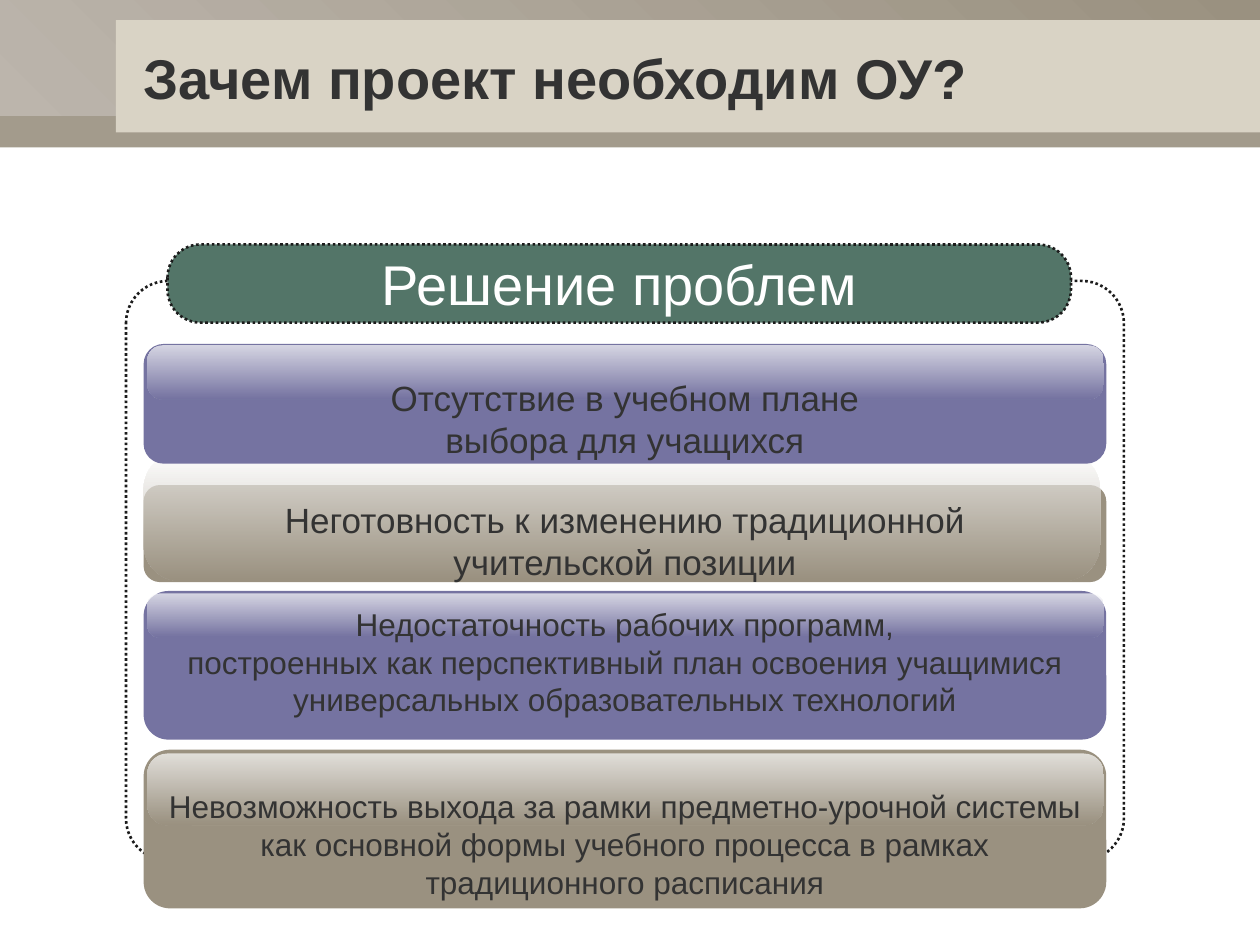
from dataclasses import dataclass

from lxml import etree
from pptx import Presentation
from pptx.dml.color import RGBColor
from pptx.enum.dml import MSO_LINE
from pptx.enum.shapes import MSO_SHAPE
from pptx.enum.text import MSO_ANCHOR, PP_ALIGN
from pptx.oxml.ns import qn
from pptx.util import Inches, Pt

RECT, ROUND = MSO_SHAPE.RECTANGLE, MSO_SHAPE.ROUNDED_RECTANGLE
DOT = MSO_LINE.ROUND_DOT
MIDDLE = MSO_ANCHOR.MIDDLE
LEFT, CENTER = PP_ALIGN.LEFT, PP_ALIGN.CENTER


@dataclass(frozen=True)
class Theme:
    font: str = "Arial"
    ink: str = "333333"
    white: str = "FFFFFF"
    taupe: str = "9A9180"
    mist: str = "BCB5AC"
    sand: str = "D9D3C5"
    violet: str = "7573A1"
    green: str = "537568"
    edge: str = "1C1C1C"
    head: int = 32
    large: int = 20
    body: int = 18


T = Theme()

# From top to bottom; tops and gloss offsets are relative to panel and card.
# top, height, gloss (x, y, height), label (y, height), colour, size, lines
CARDS = [
    (0.5, 0.95, (0.03, 0.01, 0.43), (0.25, 0.68), T.violet, T.large,
     ["Отсутствие в учебном плане", "выбора для учащихся"]),
    (1.62, 0.77, (0, -0.26, 1.02), (0.1, 0.68), T.taupe, T.large,
     ["Неготовность к изменению традиционной", "учительской позиции"]),
    (2.46, 1.18, (0.03, 0.02, 0.35), (0, 1.12), T.violet, T.body,
     ["Недостаточность рабочих программ,",
      "построенных как перспективный план освоения учащимися",
      "универсальных образовательных технологий"]),
    (3.72, 1.26, (0.03, 0.03, 0.57), (0.24, 1.01), T.taupe, T.body,
     ["Невозможность выхода за рамки предметно-урочной системы "
      "как основной формы учебного процесса в рамках "
      "традиционного расписания"]),
]


def rgb(code):
    return RGBColor.from_string(code)


def block(slide, box, kind=RECT, fill=None, fade=None, angle=270,
          alpha=None, round=None, dotted=False):
    """Add a shape; fade is a pair of colours, alpha a percentage."""
    shape = slide.shapes.add_shape(kind, *map(Inches, box))
    shape.shadow.inherit = False
    if round is not None:
        shape.adjustments[0] = round
    if fade:
        shape.fill.gradient()
        shape.fill.gradient_angle = angle
        for stop, code in zip(shape.fill.gradient_stops, fade):
            stop.color.rgb = rgb(code)
    elif fill:
        shape.fill.solid()
        shape.fill.fore_color.rgb = rgb(fill)
    else:
        shape.fill.background()
    if alpha:
        for color in shape._element.spPr.iter(qn("a:srgbClr")):
            etree.SubElement(color, qn("a:alpha")).set("val", str(alpha * 1000))
    if dotted:
        shape.line.color.rgb = rgb(T.edge)
        shape.line.width = Pt(1.5)
        shape.line.dash_style = DOT
    else:
        shape.line.fill.background()
    return shape


def write(shape, lines, size=T.body, color=T.ink, bold=False,
          align=CENTER, wrap=True):
    frame = shape.text_frame
    frame.word_wrap = wrap
    frame.vertical_anchor = MIDDLE
    for i, line in enumerate(lines):
        para = frame.add_paragraph() if i else frame.paragraphs[0]
        para.text = line
        para.alignment = align
        para.font.name = T.font
        para.font.size = Pt(size)
        para.font.bold = bold
        para.font.color.rgb = rgb(color)


def header(slide, box):
    x, y, w, h = box
    block(slide, (x, y + 0.75, w, h - 0.75), fill=T.taupe, alpha=90)
    block(slide, (x, y, w, 0.92), fade=(T.mist, T.taupe), angle=45)
    block(slide, (x + 0.92, y + 0.16, w - 0.92, 0.89), fill=T.sand)
    title = slide.shapes.add_textbox(
        *map(Inches, (x + 1.04, y + 0.26, 8.5, 0.7)))
    write(title, ["Зачем проект необходим ОУ?"], size=T.head, bold=True,
          align=LEFT)


def card(slide, box, gloss, color):
    x, y, w, h = box
    dx, dy, depth = gloss
    block(slide, box, ROUND, fill=color, round=0.167)
    block(slide, (x + dx, y + dy, w - 0.05, depth), ROUND,
          fade=(T.white, color), alpha=70, round=0.284)


def panel(slide, box):
    """Dotted frame with its heading and the stack of glossy cards."""
    x, y, w, h = box
    left, wide = x + 0.14, w - 0.28
    block(slide, box, ROUND, round=0.073, dotted=True)
    # Upper cards overlap the gloss of the lower ones.
    for top, high, gloss, _, color, _, _ in reversed(CARDS):
        card(slide, (left, y + top, wide, high), gloss, color)
    for top, _, _, (dy, high), _, size, lines in CARDS:
        label = slide.shapes.add_textbox(
            *map(Inches, (left, y + top + dy, wide, high)))
        write(label, lines, size=size)
    head = block(slide, (x + 0.33, y - 0.29, 7.17, 0.62), ROUND,
                 fill=T.green, round=0.422, dotted=True)
    write(head, ["Решение проблем"], size=T.head, color=T.white, wrap=False)


def main():
    deck = Presentation()
    deck.slide_width, deck.slide_height = Inches(10), Inches(7.5)
    slide = deck.slides.add_slide(deck.slide_layouts[6])
    header(slide, (0, 0, 10, 1.17))
    panel(slide, (1, 2.23, 7.92, 4.6))
    deck.save("out.pptx")


if __name__ == "__main__":
    main()
